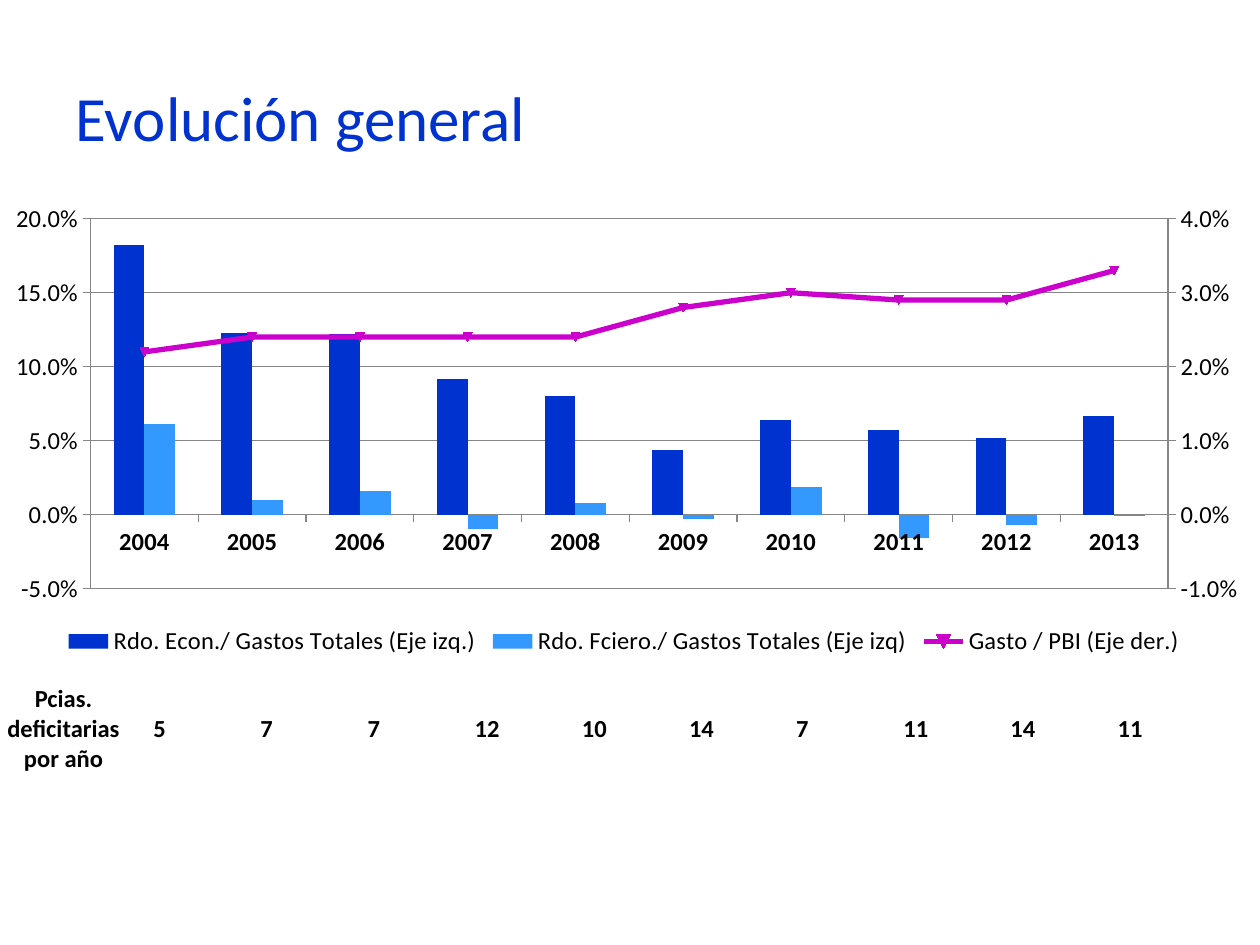
from copy import deepcopy

from lxml.etree import SubElement
from pptx import Presentation
from pptx.chart.axis import ValueAxis
from pptx.chart.data import CategoryChartData
from pptx.dml.color import RGBColor
from pptx.enum.chart import XL_CHART_TYPE, XL_LEGEND_POSITION, XL_TICK_MARK
from pptx.enum.text import MSO_ANCHOR, PP_ALIGN
from pptx.oxml import parse_xml
from pptx.oxml.ns import nsdecls, qn
from pptx.util import Cm, Pt

FONT = "Calibri"
COLORS = {
    "economic": "0032D0",
    "financial": "3399FF",
    "spending": "CC00CC",
    "text": "000000",
    "grid": "868686",
}
YEARS = [str(year) for year in range(2004, 2014)]
SERIES = {
    "Rdo. Econ./ Gastos Totales (Eje izq.)":
        [0.182, 0.123, 0.122, 0.092, 0.08, 0.044, 0.064, 0.057, 0.052, 0.067],
    "Rdo. Fciero./ Gastos Totales (Eje izq)":
        [0.061, 0.01, 0.016, -0.01, 0.008, -0.003, 0.019, -0.016, -0.007, -0.001],
    "Gasto / PBI (Eje der.)":
        [0.022, 0.024, 0.024, 0.024, 0.024, 0.028, 0.03, 0.029, 0.029, 0.033],
}
DEFICIT_PROVINCES = [5, 7, 7, 12, 10, 14, 7, 11, 14, 11]


def color(name):
    return RGBColor.from_string(COLORS[name])


def format_font(font, size, name="text", bold=False):
    font.name = FONT
    font.size = Pt(size)
    font.bold = bold
    font.color.rgb = color(name)


def write_text(frame, text, size, name="text", bold=False, align=PP_ALIGN.LEFT):
    para = frame.paragraphs[0]
    para.alignment = align
    span = para.add_run()
    span.text = text
    format_font(span.font, size, name, bold)
    return para


def add_title(page, text):
    title = page.shapes.title
    title.left, title.top, title.width, title.height = Cm(1.27), Cm(0.76), Cm(22.86), Cm(3.18)
    title.text_frame.vertical_anchor = MSO_ANCHOR.MIDDLE
    write_text(title.text_frame, text, 36, "economic")


def set_layout(parent, x, y, width, height, inner=False):
    """Give a plot area or legend a fixed place, in fractions of the chart."""
    for old in parent.findall(qn("c:layout")):
        parent.remove(old)
    layout = parse_xml(f"<c:layout {nsdecls('c')}/>")
    manual = SubElement(layout, qn("c:manualLayout"))
    if inner:
        SubElement(manual, qn("c:layoutTarget"), val="inner")
    for tag in ("xMode", "yMode"):
        SubElement(manual, qn(f"c:{tag}"), val="edge")
    for tag, value in zip("xywh", (x, y, width, height)):
        SubElement(manual, qn(f"c:{tag}"), val=str(value))
    position = 0 if inner else 1
    parent.insert(position, layout)


def format_axis(axis, bold=False):
    axis.major_tick_mark = XL_TICK_MARK.OUTSIDE
    axis.minor_tick_mark = XL_TICK_MARK.NONE
    format_font(axis.tick_labels.font, 14, bold=bold)
    axis.format.line.color.rgb = color("grid")
    axis.format.line.width = Pt(0.75)


def set_scale(axis, low, high, step):
    axis.minimum_scale, axis.maximum_scale, axis.major_unit = low, high, step


def set_value(parent, tag, value):
    """Set the val of a child element that the chart may hold."""
    for child in parent.findall(qn(tag)):
        child.set("val", value)


def move_last_series_to_line(chart):
    """Draw the last series as a line on a second value axis at the right."""
    area = chart._chartSpace.chart.plotArea
    bars = area.find(qn("c:barChart"))
    series = bars.findall(qn("c:ser"))[-1]
    for invert in series.findall(qn("c:invertIfNegative")):
        series.remove(invert)
    line = parse_xml(
        f'<c:lineChart {nsdecls("c")}><c:grouping val="standard"/><c:varyColors val="0"/>'
        '<c:marker val="1"/><c:axId val="5001"/><c:axId val="5002"/></c:lineChart>')
    line.insert(2, series)
    bars.addnext(line)

    last_axis = area.find(qn("c:valAx"))
    for tag, own, other in (("c:catAx", "5001", "5002"), ("c:valAx", "5002", "5001")):
        axis = deepcopy(area.find(qn(tag)))
        set_value(axis, "c:axId", own)
        set_value(axis, "c:crossAx", other)
        last_axis.addnext(axis)
        last_axis = axis
        if tag == "c:catAx":
            set_value(axis, "c:delete", "1")
    set_value(last_axis, "c:axPos", "r")
    set_value(last_axis, "c:crosses", "max")
    right_axis = ValueAxis(last_axis)
    right_axis.has_major_gridlines = False
    set_scale(right_axis, -0.01, 0.04, 0.01)


def add_results_chart(page):
    data = CategoryChartData(number_format="0.0%")
    data.categories = YEARS
    for name, values in SERIES.items():
        data.add_series(name, values)
    chart = page.shapes.add_chart(
        XL_CHART_TYPE.COLUMN_CLUSTERED, Cm(0.2), Cm(3.58), Cm(25), Cm(10), data).chart
    format_font(chart.font, 10)
    chart.has_title = False

    format_axis(chart.category_axis, bold=True)
    value_axis = chart.value_axis
    format_axis(value_axis)
    set_scale(value_axis, -0.05, 0.2, 0.05)
    value_axis.tick_labels.number_format = "0.0%"
    value_axis.tick_labels.number_format_is_linked = False
    grid_line = value_axis.major_gridlines.format.line
    grid_line.color.rgb = color("grid")
    grid_line.width = Pt(0.75)

    move_last_series_to_line(chart)
    bars, lines = chart.plots
    bars.gap_width = 150
    bars.vary_by_categories = False
    for series, name in zip(bars.series, ("economic", "financial")):
        series.invert_if_negative = False
        series.format.fill.solid()
        series.format.fill.fore_color.rgb = color(name)
    spending = lines.series[0]
    spending.smooth = False
    spending.format.line.color.rgb = color("spending")
    spending.format.line.width = Pt(3)
    spending.marker.size = 5
    spending.marker.format.fill.solid()
    spending.marker.format.fill.fore_color.rgb = color("spending")
    spending.marker.format.line.color.rgb = color("spending")

    chart.has_legend = True
    chart.legend.position = XL_LEGEND_POSITION.BOTTOM
    chart.legend.include_in_layout = False
    format_font(chart.legend.font, 14)
    set_layout(chart._chartSpace.chart.plotArea, 0.065, 0.083, 0.869, 0.746, inner=True)
    set_layout(chart.legend._element, 0.04, 0.9, 0.91, 0.07)


def add_deficit_table(page):
    texts = ["Pcias. deficitarias por año", *map(str, DEFICIT_PROVINCES)]
    table = page.shapes.add_table(
        1, len(texts), Cm(0), Cm(13.77), Cm(24.16), Cm(1.8)).table
    table.first_row = table.horz_banding = False
    for index, text in enumerate(texts):
        is_label = index == 0
        table.columns[index].width = Cm(2.56 if is_label else 2.16)
        cell = table.cell(0, index)
        cell.fill.background()
        cell.vertical_anchor = MSO_ANCHOR.MIDDLE
        cell.margin_left = cell.margin_right = cell.margin_top = Cm(0.03)
        cell.margin_bottom = Cm(0)
        para = write_text(cell.text_frame, text, 14, bold=True,
                          align=PP_ALIGN.CENTER if is_label else PP_ALIGN.LEFT)
        if not is_label:
            para._p.get_or_add_pPr().set("marL", str(Cm(0.5)))


def main():
    deck = Presentation()
    deck.slide_width, deck.slide_height = Cm(25.4), Cm(19.05)
    page = deck.slides.add_slide(deck.slide_layouts[5])
    add_title(page, "Evolución general")
    add_results_chart(page)
    add_deficit_table(page)
    deck.save("out.pptx")


if __name__ == "__main__":
    main()
